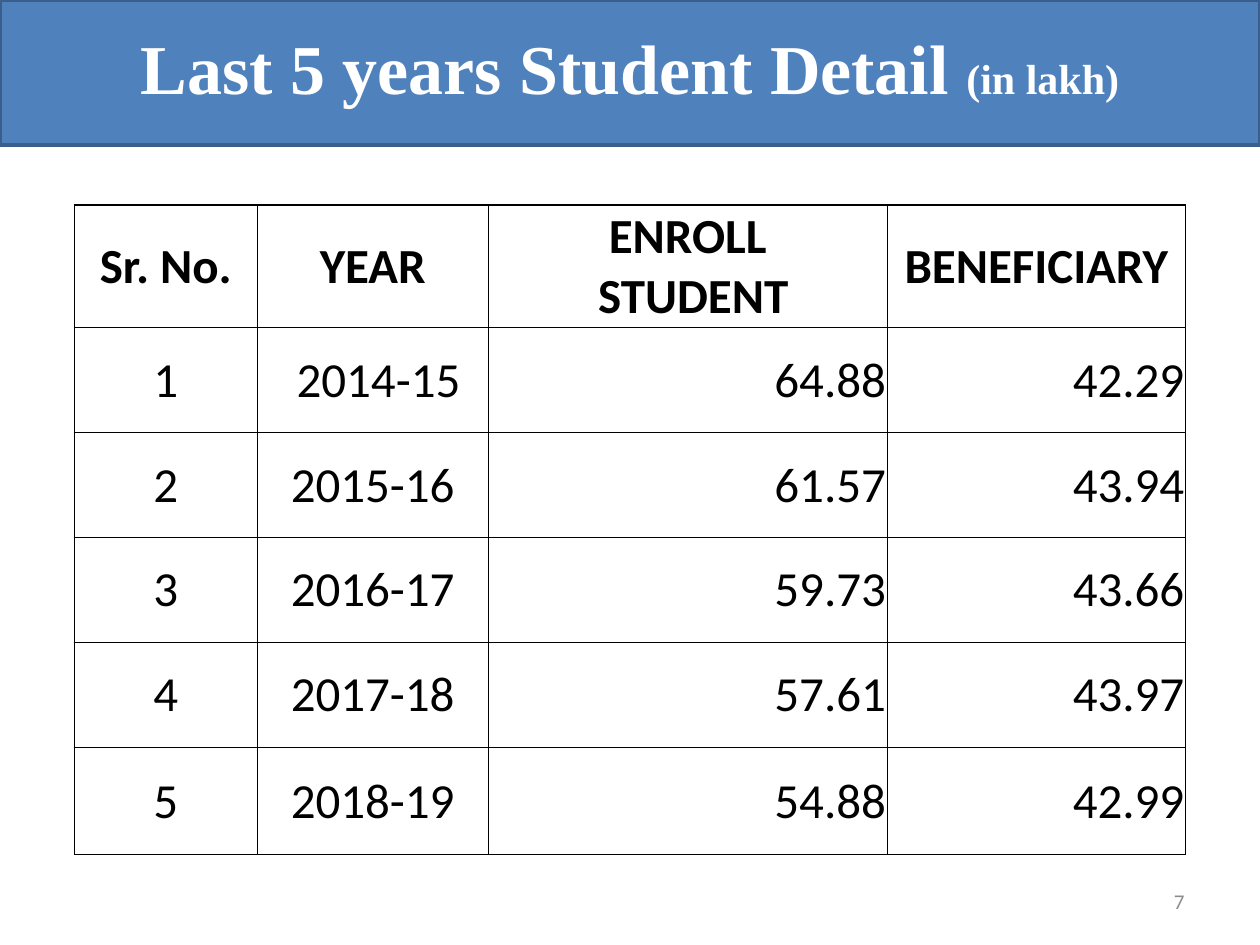
"""Build a slide with a five-year table of enrolled students and beneficiaries."""
import pptx
import pptx.dml.color
import pptx.enum.text
import pptx.oxml
import pptx.oxml.ns
import pptx.util

Pt = pptx.util.Pt
ALIGN = pptx.enum.text.PP_ALIGN
MIDDLE = pptx.enum.text.MSO_ANCHOR.MIDDLE

TITLE = "Last 5 years Student Detail "
UNIT = "(in lakh)"
PAGE_NUMBER = "7"
HEADERS = ["Sr. No.", "YEAR", "ENROLL\n STUDENT", "BENEFICIARY"]
RECORDS = [
    ("1", "2014-15 ", "64.88", "42.29"),
    ("2", "2015-16", "61.57", "43.94"),
    ("3", "2016-17", "59.73", "43.66"),
    ("4", "2017-18", "57.61", "43.97"),
    ("5", "2018-19", "54.88", "42.99"),
]
COLUMN_WIDTHS = [104.5, 132, 228, 170.5]
ROW_HEIGHTS = [70, 60, 60, 60, 60, 61.5]
COLUMN_ALIGNS = [ALIGN.CENTER, ALIGN.CENTER, ALIGN.RIGHT, ALIGN.RIGHT]
FIRST_YEAR_INDENT = 13

THEME = {
    "banner": "4F81BD", "banner_line": "3A5F8C", "title": "FFFFFF",
    "ink": "000000", "muted": "8C8C8C",
    "title_font": "Times New Roman", "body_font": "Calibri",
    "title_size": 40, "unit_size": 24, "table_size": 28, "number_size": 12,
    "thin": 0.5, "thick": 1,
}


def color(name):
    return pptx.dml.color.RGBColor.from_string(THEME[name])


def add_text(para, text, size="table_size", font="body_font", ink="ink",
             bold=False, align=ALIGN.CENTER):
    para.alignment = align
    span = para.add_run()
    span.text = text
    span.font.size = Pt(THEME[size])
    span.font.name = THEME[font]
    span.font.bold = bold
    span.font.color.rgb = color(ink)


def set_margins(box, left, top, right, bottom):
    box.margin_left, box.margin_top = Pt(left), Pt(top)
    box.margin_right, box.margin_bottom = Pt(right), Pt(bottom)
    box.vertical_anchor = MIDDLE


def set_borders(cell, weights):
    properties = cell._tc.get_or_add_tcPr()
    for side, weight in weights.items():
        properties.append(pptx.oxml.parse_xml(
            f'<a:ln{side} {pptx.oxml.ns.nsdecls("a")} w="{Pt(THEME[weight])}">'
            f'<a:solidFill><a:srgbClr val="{THEME["ink"]}"/></a:solidFill>'
            f'<a:prstDash val="solid"/></a:ln{side}>'))


def add_banner(page):
    banner = page.shapes.title
    banner.left, banner.top, banner.width, banner.height = Pt(0), Pt(0), Pt(720), Pt(83)
    banner.fill.solid()
    banner.fill.fore_color.rgb = color("banner")
    banner.line.color.rgb = color("banner_line")
    banner.line.width = Pt(2)
    frame = banner.text_frame
    frame.word_wrap = True
    frame.auto_size = pptx.enum.text.MSO_AUTO_SIZE.NONE
    set_margins(frame, 7.2, 0, 7.2, 7.2)
    for text, size in ((TITLE, "title_size"), (UNIT, "unit_size")):
        add_text(frame.paragraphs[0], text, size=size, font="title_font",
                 ink="title", bold=True)


def add_student_table(page):
    rows = [HEADERS, *RECORDS]
    last_row, last_column = len(rows) - 1, len(HEADERS) - 1
    table = page.shapes.add_table(
        len(rows), len(HEADERS), Pt(42.5), Pt(117),
        Pt(sum(COLUMN_WIDTHS)), Pt(sum(ROW_HEIGHTS))).table
    table.first_row = table.horz_banding = False
    for column, width in zip(table.columns, COLUMN_WIDTHS):
        column.width = Pt(width)
    for row, height in zip(table.rows, ROW_HEIGHTS):
        row.height = Pt(height)

    for r, values in enumerate(rows):
        for c, value in enumerate(values):
            cell = table.cell(r, c)
            set_margins(cell, 0.7, 0.7, 0.7, 0)
            set_borders(cell, {
                "L": "thick" if c == 0 else "thin",
                "R": "thick" if c == last_column else "thin",
                "T": "thick" if r <= 1 else "thin",
                "B": "thick" if r in (0, last_row) else "thin",
            })
            cell.fill.background()
            frame = cell.text_frame
            for i, line in enumerate(value.split("\n")):
                para = frame.add_paragraph() if i else frame.paragraphs[0]
                add_text(para, line, bold=r == 0,
                         align=COLUMN_ALIGNS[c] if r else ALIGN.CENTER)
    first_year = table.cell(1, 1).text_frame.paragraphs[0]
    first_year._p.get_or_add_pPr().set("indent", str(Pt(FIRST_YEAR_INDENT)))


def add_page_number(page):
    box = page.shapes.add_textbox(Pt(516), Pt(500.5), Pt(168), Pt(28.75))
    box.text_frame.word_wrap = True
    box.text_frame.vertical_anchor = MIDDLE
    add_text(box.text_frame.paragraphs[0], PAGE_NUMBER, size="number_size",
             ink="muted", align=ALIGN.RIGHT)


def main():
    deck = pptx.Presentation()
    deck.slide_width, deck.slide_height = Pt(720), Pt(540)
    page = deck.slides.add_slide(deck.slide_layouts[5])
    add_banner(page)
    add_student_table(page)
    add_page_number(page)
    deck.save("out.pptx")


if __name__ == "__main__":
    main()
